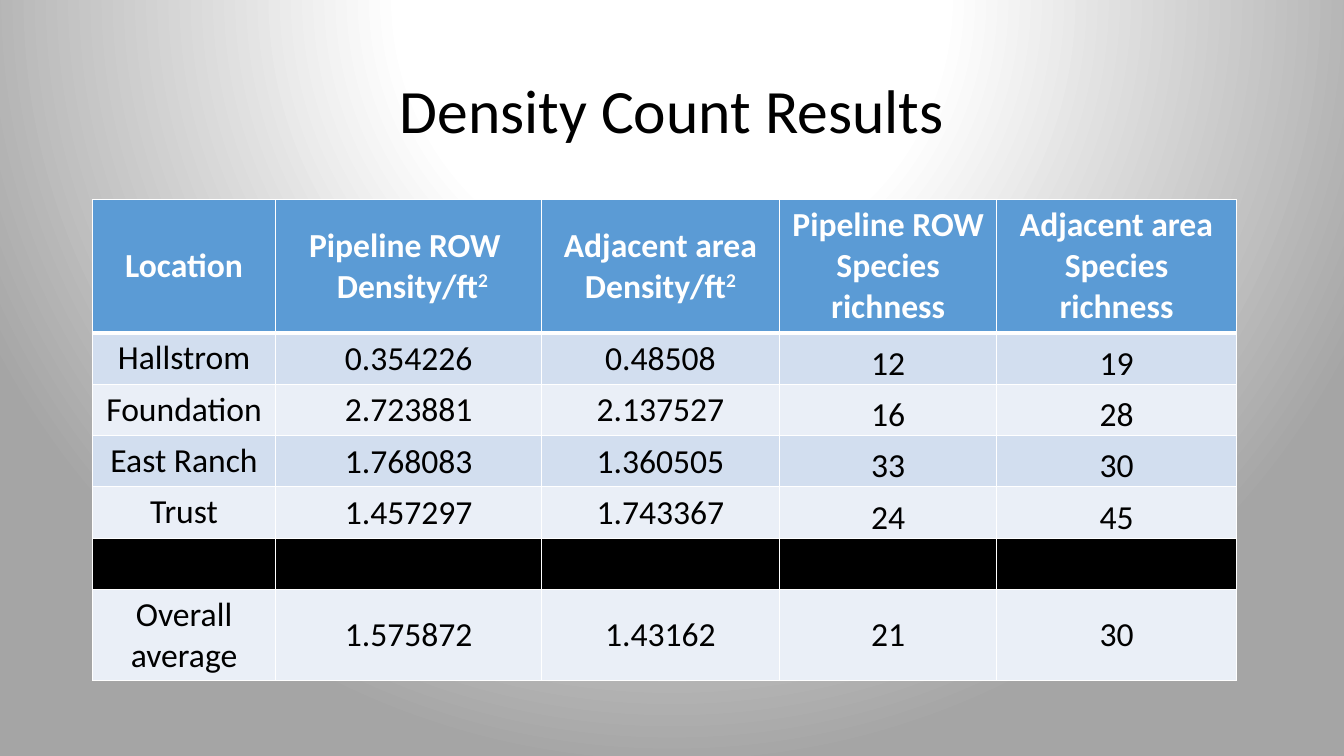
from pptx import Presentation
from pptx.dml.color import RGBColor
from pptx.enum import text as tx
from pptx.oxml import parse_xml
from pptx.oxml.ns import nsdecls, qn
from pptx.util import Pt

FONT = "Calibri"
HUES = {"ink": "000000", "white": "FFFFFF", "grey": "A5A5A5",
        "head": "5B9BD5", "odd": "D2DEEF", "even": "EAEFF7"}

# A caret marks the start of a superscript
HEADS = ["Location", "Pipeline ROW \n Density/ft^2", "Adjacent area Density/ft^2",
         "Pipeline ROW\nSpecies richness", "Adjacent area Species richness"]
SITES = [
    ["Hallstrom", "0.354226", "0.48508", "12", "19"],
    ["Foundation", "2.723881", "2.137527", "16", "28"],
    ["East Ranch", "1.768083", "1.360505", "33", "30"],
    ["Trust", "1.457297", "1.743367", "24", "45"],
]
TOTAL = ["Overall average", "1.575872", "1.43162", "21", "30"]
ROWS = [HEADS, *SITES, [""] * 5, TOTAL]
COLS = [131, 189.8, 170, 155.3, 171]
HIGHS = [95.2] + [36.7] * 5 + [64]


def color(name):
    return RGBColor.from_string(HUES[name])


def write(frame, words, size, hue, bold=False, space=None):
    for i, line in enumerate(words.split("\n")):
        para = frame.paragraphs[0] if i == 0 else frame.add_paragraph()
        para.alignment = tx.PP_ALIGN.CENTER
        para.line_spacing = space
        para.font.size = Pt(size)
        for j, part in enumerate(line.split("^")):
            if not part:
                continue
            run = para.add_run()
            run.text = part
            font = run.font
            font.name, font.size, font.bold = FONT, Pt(size), bold
            font.color.rgb = color(hue)
            if j:
                run._r.get_or_add_rPr().set("baseline", "30000")


def edge(cell, top, bottom):
    props = cell._tc.get_or_add_tcPr()
    sides = {"lnL": 1, "lnR": 1, "lnT": top, "lnB": bottom}
    for i, (tag, wide) in enumerate(sides.items()):
        props.insert(i, parse_xml(
            f'<a:{tag} {nsdecls("a")} w="{Pt(wide)}"><a:solidFill>'
            f'<a:srgbClr val="{HUES["white"]}"/></a:solidFill></a:{tag}>'))


def backdrop(slide):
    slide.background.fill.gradient()
    old = slide.element.find(".//" + qn("a:gradFill"))
    stops = "".join(
        f'<a:gs pos="{pos * 1000}"><a:srgbClr val="{HUES[hue]}"/></a:gs>'
        for pos, hue in [(0, "white"), (35, "white"), (100, "grey")])
    old.getparent().replace(old, parse_xml(
        f'<a:gradFill {nsdecls("a")} rotWithShape="1"><a:gsLst>{stops}</a:gsLst>'
        '<a:path path="circle"><a:fillToRect l="50000" t="-80000" r="50000" '
        'b="180000"/></a:path></a:gradFill>'))


def title(slide, left, top, width, height):
    box = slide.shapes.add_textbox(Pt(left), Pt(top), Pt(width), Pt(height))
    frame = box.text_frame
    frame.word_wrap = True
    frame.vertical_anchor = tx.MSO_ANCHOR.MIDDLE
    write(frame, "Density Count Results", 44, "ink", space=0.9)


def results(slide, left, top):
    grid = slide.shapes.add_table(len(ROWS), len(COLS), Pt(left), Pt(top),
                                  Pt(sum(COLS)), Pt(sum(HIGHS))).table
    grid.first_row = grid.horz_banding = False
    for col, wide in zip(grid.columns, COLS):
        col.width = Pt(wide)
    for r, (row, high) in enumerate(zip(ROWS, HIGHS)):
        grid.rows[r].height = Pt(high)
        site = 1 <= r <= len(SITES)
        # Header, black divider, then alternating bands
        if r == 0:
            fill = "head"
        elif not any(row):
            fill = "ink"
        else:
            fill = "odd" if r % 2 else "even"
        for c, words in enumerate(row):
            cell = grid.cell(r, c)
            cell.fill.solid()
            cell.fill.fore_color.rgb = color(fill)
            # Species counts sit on the bottom of the site rows
            low = site and c > 2
            cell.vertical_anchor = tx.MSO_ANCHOR.BOTTOM if low else tx.MSO_ANCHOR.MIDDLE
            if r and c and words:
                cell.margin_left = cell.margin_right = cell.margin_top = Pt(0.75)
                cell.margin_bottom = 0
            write(cell.text_frame, words, 24, "ink" if r else "white", r == 0)
            edge(cell, 3 if r == 1 else 1, 3 if r == 0 else 1)


def main():
    deck = Presentation()
    deck.slide_width, deck.slide_height = Pt(960), Pt(540)
    slide = deck.slides.add_slide(deck.slide_layouts[6])
    backdrop(slide)
    title(slide, 66, 28.8, 828, 104.4)
    results(slide, 66, 142.5)
    deck.save("out.pptx")


if __name__ == "__main__":
    main()
